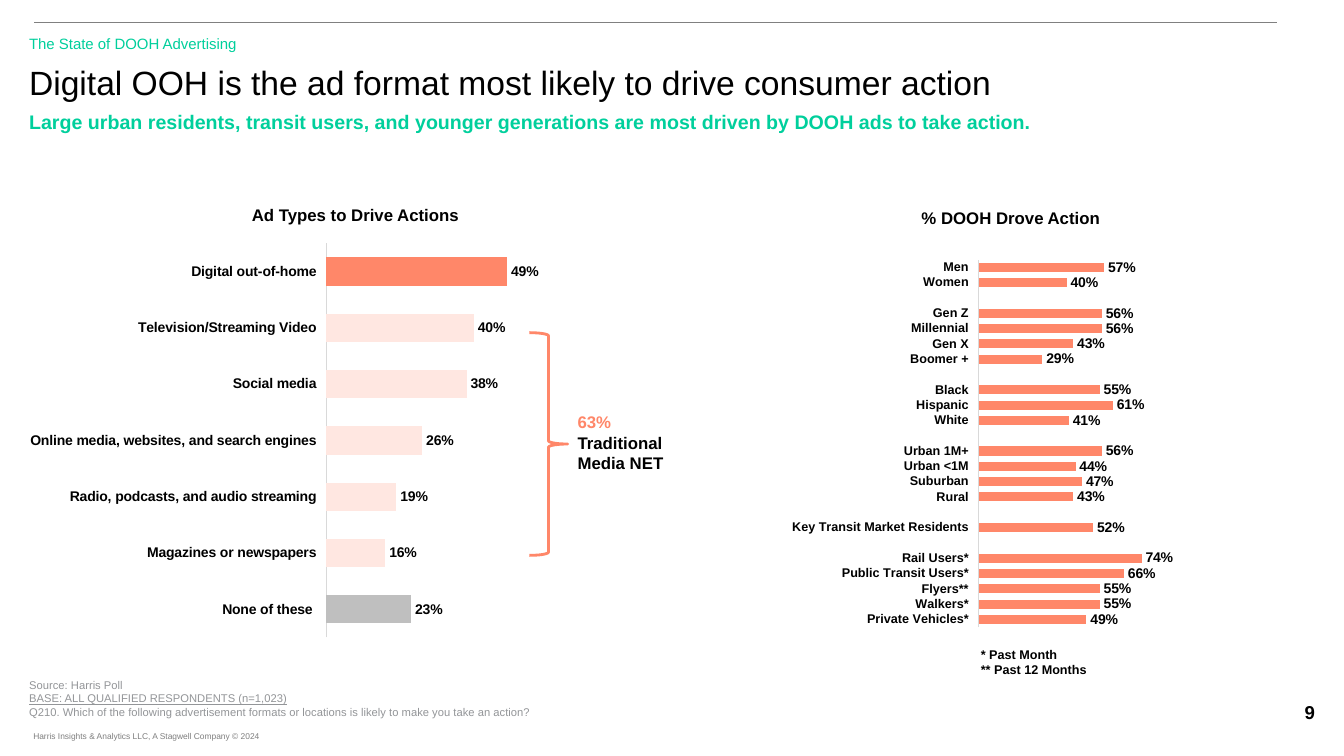
from dataclasses import dataclass
from typing import Any, Optional

from lxml import etree
from pptx import Presentation
from pptx.chart.data import CategoryChartData
from pptx.dml.color import RGBColor
from pptx.enum.chart import XL_CHART_TYPE, XL_LABEL_POSITION, XL_TICK_LABEL_POSITION, XL_TICK_MARK
from pptx.enum.shapes import MSO_CONNECTOR, MSO_SHAPE
from pptx.enum.text import PP_ALIGN
from pptx.oxml import parse_xml
from pptx.oxml.ns import nsdecls, qn
from pptx.util import Inches, Pt

LEFT, CENTER = PP_ALIGN.LEFT, PP_ALIGN.CENTER
BAR_CLUSTERED = XL_CHART_TYPE.BAR_CLUSTERED
OUTSIDE_END = XL_LABEL_POSITION.OUTSIDE_END
LOW = XL_TICK_LABEL_POSITION.LOW
NO_TICK = XL_TICK_MARK.NONE
STRAIGHT = MSO_CONNECTOR.STRAIGHT
RIGHT_BRACE = MSO_SHAPE.RIGHT_BRACE

FONT = "Arial"
BLACK, GREEN, CORAL = "000000", "00CF9C", "FF8769"
PALE_CORAL, SILVER, AXIS_GRAY = "FFE7E1", "BFBFBF", "D9D9D9"
SOURCE_GRAY, FOOTER_GRAY, RULE_GRAY = "939598", "7F7F7F", "808080"

Box = tuple[float, float, float, float]


@dataclass
class Line:
    text: str
    color: str = BLACK
    underline: bool = False


@dataclass
class TextBlock:
    box: Box
    size: float
    lines: list[Line]
    bold: bool = False
    align: Any = LEFT
    wrap: bool = True
    left_inset: float = 0.1


@dataclass
class BarChart:
    box: Box
    plot: Box
    rows: list[tuple[str, Optional[float]]]
    gap: int
    label_size: int
    reverse: bool
    point_colors: dict[int, str]


TEXT_BLOCKS = [
    TextBlock((12.48, 6.9, 1.02, 0.33), 13.3, [Line("9")], bold=True, align=CENTER),
    TextBlock((0.33, 7.2, 2.39, 0.2), 6,
              [Line("Harris Insights & Analytics LLC, A Stagwell Company © 2024", FOOTER_GRAY)],
              wrap=False, left_inset=0),
    TextBlock((0.19, 0.29, 6.67, 0.28), 10.7, [Line("The State of DOOH Advertising", GREEN)]),
    TextBlock((0.19, 0.57, 12.47, 0.47), 24,
              [Line("Digital OOH is the ad format most likely to drive consumer action")]),
    TextBlock((0.19, 1.04, 12.47, 0.41), 14,
              [Line("Large urban residents, transit users, and younger generations "
                    "are most driven by DOOH ads to take action.", GREEN)], bold=True),
    TextBlock((0.19, 6.68, 10.12, 0.5), 8, [
        Line("Source: Harris Poll", SOURCE_GRAY),
        Line("BASE: ALL QUALIFIED RESPONDENTS (n=1,023)", SOURCE_GRAY, underline=True),
        Line("Q210. Which of the following advertisement formats or locations "
             "is likely to make you take an action?", SOURCE_GRAY)]),
    TextBlock((1.4, 1.98, 4.25, 0.3), 12, [Line("Ad Types to Drive Actions")], bold=True, align=CENTER),
    TextBlock((8.82, 2.01, 2.41, 0.3), 12, [Line("% DOOH Drove Action")], bold=True, align=CENTER),
    TextBlock((5.63, 4.04, 1.38, 0.71), 12,
              [Line("63%", CORAL), Line("Traditional Media NET")], bold=True),
    TextBlock((9.63, 6.37, 2.03, 0.4), 9,
              [Line("* Past Month"), Line("** Past 12 Months")], bold=True),
]

AD_TYPES = [
    ("Digital out-of-home", 0.49), ("Television/Streaming Video", 0.4), ("Social media", 0.38),
    ("Online media, websites, and search engines", 0.26),
    ("Radio, podcasts, and audio streaming", 0.19),
    ("Magazines or newspapers", 0.16), ("None of these ", 0.23),
]

AUDIENCE_GROUPS = [
    [("Private Vehicles*", 0.49), ("Walkers*", 0.55), ("Flyers**", 0.55),
     ("Public Transit Users*", 0.66), ("Rail Users*", 0.74)],
    [("Key Transit Market Residents", 0.52)],
    [("Rural", 0.43), ("Suburban", 0.47), ("Urban <1M", 0.44), ("Urban 1M+", 0.56)],
    [("White", 0.41), ("Hispanic", 0.61), ("Black", 0.55)],
    [("Boomer +", 0.29), ("Gen X", 0.43), ("Millennial", 0.56), ("Gen Z", 0.56)],
    [("Women", 0.4), ("Men", 0.57)],
]


def with_gaps(groups: list) -> list:
    rows = list(groups[0])
    for group in groups[1:]:
        rows += [("", None), *group]
    return rows


CHARTS = [
    BarChart((-0.21, 2.41, 7.18, 3.92), (0.48, 0, 0.51, 1), AD_TYPES, 100, 10, True,
             {**dict.fromkeys(range(1, 6), PALE_CORAL), 6: SILVER}),
    BarChart((7.61, 2.42, 4.46, 3.92), (0.47, 0.04, 0.49, 0.93), with_gaps(AUDIENCE_GROUPS),
             70, 9, False, {}),
]


def rgb(value: str) -> RGBColor:
    return RGBColor.from_string(value)


def apply_format(target: Any, values: dict[str, Any]) -> None:
    for name, value in values.items():
        setattr(target, name, value)


def format_font(font: Any, size: float, color: str, bold: bool, underline: bool = False) -> None:
    apply_format(font, {"name": FONT, "size": Pt(size), "bold": bold, "underline": underline})
    font.color.rgb = rgb(color)


def fill_solid(fill: Any, color: str) -> None:
    fill.solid()
    fill.fore_color.rgb = rgb(color)


def format_line(line: Any, color: str, width: float) -> None:
    line.color.rgb = rgb(color)
    line.width = Pt(width)


def add_text(slide: Any, block: TextBlock) -> None:
    frame = slide.shapes.add_textbox(*map(Inches, block.box)).text_frame
    apply_format(frame, {"word_wrap": block.wrap, "margin_left": Inches(block.left_inset)})
    for index, line in enumerate(block.lines):
        paragraph = frame.add_paragraph() if index else frame.paragraphs[0]
        paragraph.alignment = block.align
        run = paragraph.add_run()
        run.text = line.text
        format_font(run.font, block.size, line.color, block.bold, line.underline)


def place_plot(chart: Any, plot: Box) -> None:
    plot_area = chart.plots[0]._element.getparent()
    for old_layout in plot_area.findall(qn("c:layout")):
        plot_area.remove(old_layout)
    layout = parse_xml(f"<c:layout {nsdecls('c')}><c:manualLayout/></c:layout>")
    settings = [("layoutTarget", "inner"), ("xMode", "edge"), ("yMode", "edge"),
                *zip("xywh", map(str, plot))]
    for tag, value in settings:
        etree.SubElement(layout[0], qn(f"c:{tag}")).set("val", value)
    plot_area.insert(0, layout)


def add_bar_chart(slide: Any, spec_chart: BarChart) -> None:
    data = CategoryChartData(number_format="0%")
    data.categories = [label for label, _ in spec_chart.rows]
    data.add_series("Series 1", [value for _, value in spec_chart.rows])
    chart = slide.shapes.add_chart(BAR_CLUSTERED, *map(Inches, spec_chart.box), data).chart
    apply_format(chart, {"has_legend": False, "has_title": False})
    format_font(chart.font, 12, BLACK, True)

    category_axis, value_axis = chart.category_axis, chart.value_axis
    apply_format(category_axis, {
        "major_tick_mark": NO_TICK, "minor_tick_mark": NO_TICK, "tick_label_position": LOW,
        "has_major_gridlines": False, "reverse_order": spec_chart.reverse})
    format_font(category_axis.tick_labels.font, spec_chart.label_size, BLACK, True)
    format_line(category_axis.format.line, AXIS_GRAY, 0.75)
    apply_format(value_axis, {"minimum_scale": 0, "maximum_scale": 1,
                              "has_major_gridlines": False, "visible": False})

    plot = chart.plots[0]
    apply_format(plot, {"gap_width": spec_chart.gap, "vary_by_categories": False})
    series = plot.series[0]
    fill_solid(series.format.fill, CORAL)
    for index, color in spec_chart.point_colors.items():
        fill_solid(series.points[index].format.fill, color)
    labels = series.data_labels
    apply_format(labels, {"show_value": True, "number_format": "0%",
                          "number_format_is_linked": False, "position": OUTSIDE_END})
    format_font(labels.font, 10, BLACK, True)
    place_plot(chart, spec_chart.plot)


def add_header_rule(slide: Any) -> None:
    rule = slide.shapes.add_connector(STRAIGHT, *map(Inches, (0.34, 0.22, 12.67, 0.22)))
    format_line(rule.line, RULE_GRAY, 0.5)
    etree.SubElement(rule._element.spPr, qn("a:effectLst"))


def add_media_brace(slide: Any) -> None:
    brace = slide.shapes.add_shape(RIGHT_BRACE, *map(Inches, (5.25, 3.3, 0.38, 2.21)))
    brace.shadow.inherit = False
    brace.fill.background()
    format_line(brace.line, CORAL, 2)


def main() -> None:
    presentation = Presentation()
    apply_format(presentation, {"slide_width": Inches(13.33), "slide_height": Inches(7.5)})
    slide = presentation.slides.add_slide(presentation.slide_layouts[6])
    add_header_rule(slide)
    for bar_chart in CHARTS:
        add_bar_chart(slide, bar_chart)
    add_media_brace(slide)
    for block in TEXT_BLOCKS:
        add_text(slide, block)
    presentation.save("out.pptx")


if __name__ == "__main__":
    main()
